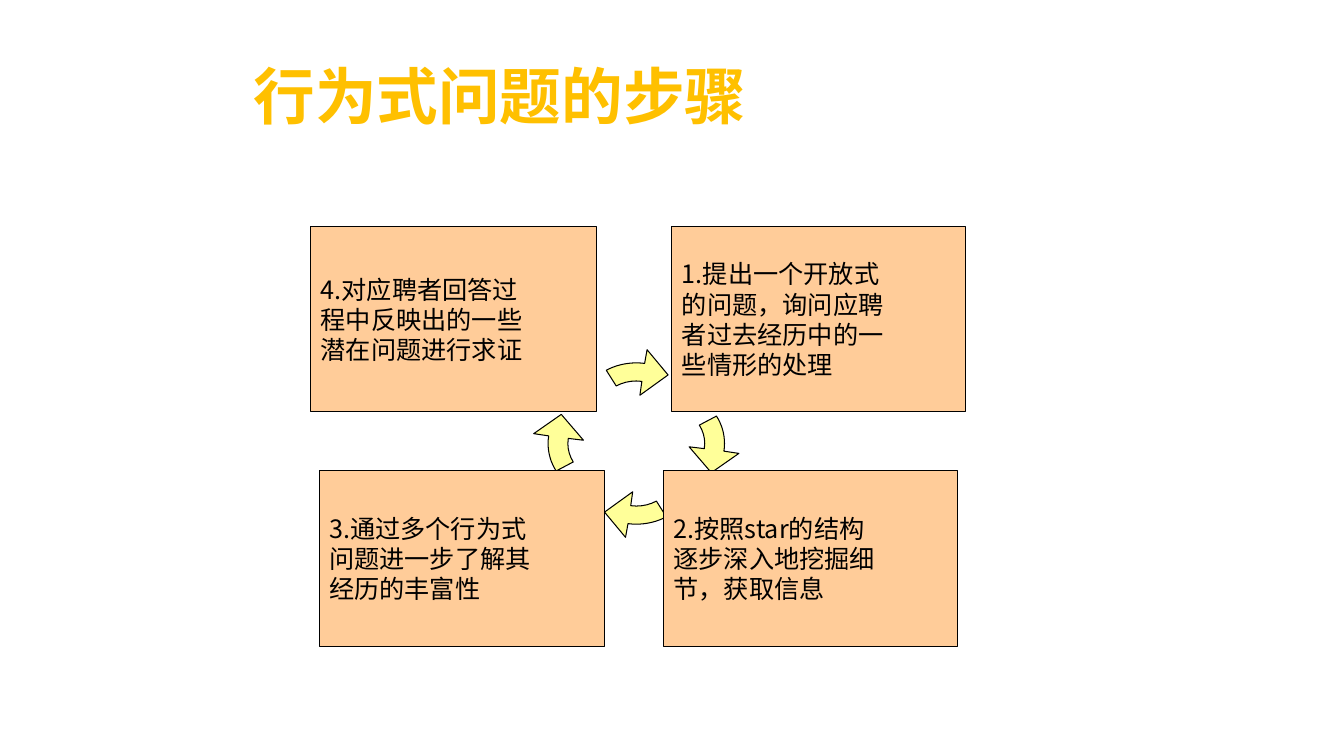
from dataclasses import dataclass
from math import cos, radians, sin, tan

from lxml.etree import SubElement
from pptx import Presentation
from pptx.dml.color import RGBColor
from pptx.enum.shapes import MSO_SHAPE
from pptx.enum.text import MSO_ANCHOR, PP_ALIGN
from pptx.oxml.ns import qn
from pptx.util import Inches, Pt


@dataclass(frozen=True)
class Theme:
    font: str = "Noto Sans CJK SC"
    heading: str = "FFC000"
    ink: str = "000000"
    card: str = "FFCC99"
    arrow: str = "FFFF99"
    heading_size: int = 44
    body_size: int = 18
    outline: float = 0.75


THEME = Theme()
WIDTH, HEIGHT = Inches(13.333), Inches(7.5)
COLUMNS, ROWS = 160, 90

HEADING = "行为式问题的步骤"
# Column, row, columns wide, rows high, lines of text
STEPS = [
    (37, 27, 34, 22, ["4.对应聘者回答过", "程中反映出的一些", "潜在问题进行求证"]),
    (38, 56, 34, 21, ["3.通过多个行为式", "问题进一步了解其", "经历的丰富性"]),
    (80, 27, 35, 22, ["1.提出一个开放式", "的问题，询问应聘", "者过去经历中的一", "些情形的处理"]),
    (79, 56, 35, 21, ["2.按照star的结构", "逐步深入地挖掘细", "节，获取信息"]),
]

CYCLE_CENTRE = (75.75, 52.8)
CYCLE_OFFSET = (3.36, 3.06)
ARC_RADIUS = (7.14, 6.54)
INNER_RADIUS = 0.67
ARC_ANGLES = (-30, 0, 8)
ARROW_HEAD = [(0.18, -1.24), (0.53, -0.78), (0.06, -0.41)]
PATH_RADIUS = 1000


def across(columns):
    return round(WIDTH * columns / COLUMNS)


def down(rows):
    return round(HEIGHT * rows / ROWS)


def frame(column, row, columns, rows):
    return across(column), down(row), across(columns), down(rows)


def write_text(shape, lines, *, size, color, bold=False, spacing=1.0):
    text = shape.text_frame
    text.word_wrap = True
    text.vertical_anchor = MSO_ANCHOR.MIDDLE
    text.text = "\n".join(lines)
    for paragraph in text.paragraphs:
        paragraph.alignment = PP_ALIGN.LEFT
        paragraph.line_spacing = spacing
        for run in paragraph.runs:
            run.font.size = Pt(size)
            run.font.bold = bold
            run.font.color.rgb = RGBColor.from_string(color)
            run.font.name = THEME.font
            SubElement(run.font._element, qn("a:ea"), typeface=THEME.font)


def paint(shape, fill):
    shape.shadow.inherit = False
    shape.fill.solid()
    shape.fill.fore_color.rgb = RGBColor.from_string(fill)
    shape.line.color.rgb = RGBColor.from_string(THEME.ink)
    shape.line.width = Pt(THEME.outline)


def add_heading(slide, text):
    heading = slide.shapes.add_textbox(*frame(29, 6.8, 102, 10.1))
    write_text(heading, [text], size=THEME.heading_size, color=THEME.heading,
               bold=True, spacing=0.9)


def add_step(slide, column, row, columns, rows, lines):
    step = slide.shapes.add_shape(MSO_SHAPE.RECTANGLE, *frame(column, row, columns, rows))
    paint(step, THEME.card)
    write_text(step, lines, size=THEME.body_size, color=THEME.ink)


def on_arc(angle, radius):
    return radius * sin(radians(angle)), -radius * cos(radians(angle))


def draw(outline, command, *points):
    """Append one drawing command, with points on a unit circle."""
    step = SubElement(outline, qn(f"a:{command}"))
    for x, y in points:
        SubElement(step, qn("a:pt"), x=str(round(PATH_RADIUS * (1 + x))),
                   y=str(round(PATH_RADIUS * (1 + y))))


def draw_arc(outline, angles, radius):
    for start, end in zip(angles, angles[1:]):
        pull = 4 / 3 * tan(radians(end - start) / 4)
        (x1, y1), (x2, y2) = on_arc(start, radius), on_arc(end, radius)
        draw(outline, "cubicBezTo", (x1 - pull * y1, y1 + pull * x1),
             (x2 + pull * y2, y2 - pull * x2), (x2, y2))


def draw_arrow(outline):
    outline.clear()
    outline.set("w", str(2 * PATH_RADIUS))
    outline.set("h", str(2 * PATH_RADIUS))
    draw(outline, "moveTo", on_arc(ARC_ANGLES[-1], INNER_RADIUS))
    draw_arc(outline, ARC_ANGLES[::-1], INNER_RADIUS)
    draw(outline, "lnTo", on_arc(ARC_ANGLES[0], 1))
    draw_arc(outline, ARC_ANGLES, 1)
    for point in ARROW_HEAD:
        draw(outline, "lnTo", point)
    SubElement(outline, qn("a:close"))


def add_cycle_arrow(cycle, quarter_turns):
    """Draw one arrow, turned clockwise from the top of the cycle."""
    side_x, side_y = on_arc(90 * quarter_turns, 1)
    centre_x = across(CYCLE_CENTRE[0] + side_x * CYCLE_OFFSET[0])
    centre_y = down(CYCLE_CENTRE[1] + side_y * CYCLE_OFFSET[1])
    radius_x, radius_y = across(ARC_RADIUS[0]), down(ARC_RADIUS[1])
    if quarter_turns % 2:
        radius_x, radius_y = radius_y, radius_x
    left, right = centre_x - radius_x, centre_x + radius_x
    top, bottom = centre_y - radius_y, centre_y + radius_y
    builder = cycle.shapes.build_freeform(left, top)
    builder.add_line_segments([(right, top), (right, bottom)])
    arrow = builder.convert_to_shape()
    draw_arrow(next(arrow._element.iter(qn("a:path"))))
    arrow.rotation = 90 * quarter_turns
    paint(arrow, THEME.arrow)


def main():
    deck = Presentation()
    deck.slide_width, deck.slide_height = WIDTH, HEIGHT
    slide = deck.slides.add_slide(deck.slide_layouts[6])
    cycle = slide.shapes.add_group_shape()
    for quarter_turns in range(4):
        add_cycle_arrow(cycle, quarter_turns)
    add_heading(slide, HEADING)
    for step in STEPS:
        add_step(slide, *step)
    deck.save("out.pptx")


if __name__ == "__main__":
    main()
